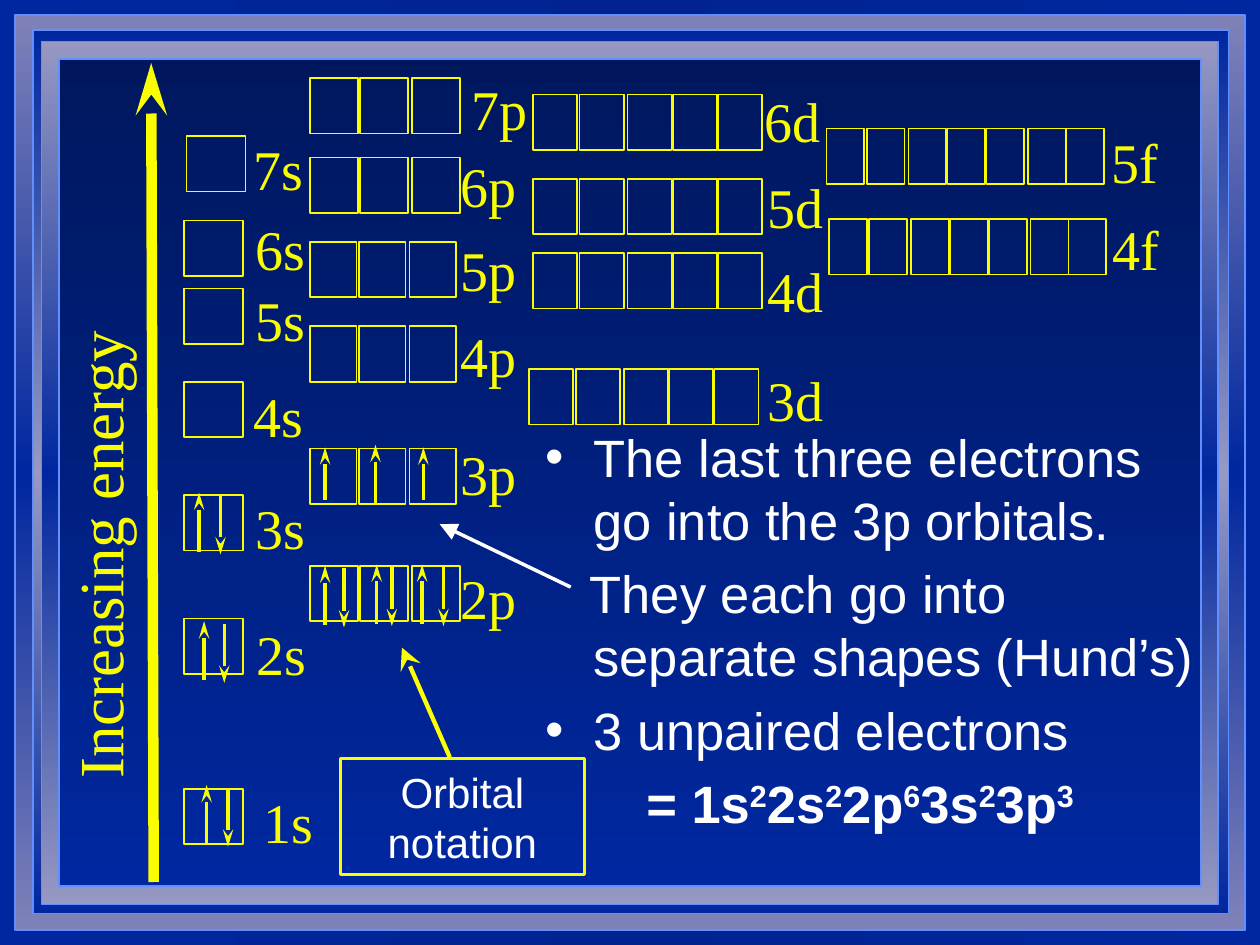
"""Build a slide of the orbital energy diagram for an atom with three unpaired 3p electrons."""
import pptx
import pptx.enum.dml
import pptx.enum.shapes
import pptx.enum.text
import pptx.oxml
import pptx.oxml.ns
import pptx.util
from pptx.util import Inches

COLORS = {"blue": "00279F", "mid": "002390", "night": "00175E", "haze": "7F82B8",
          "mist": "9799C2", "pale": "9799C2", "edge": "618FFD",
          "yellow": "FAFD00", "bright": "FFFF00", "white": "FFFFFF"}
SERIF, SANS = "Times New Roman", "Arial"

FRAMES = [
    ((0.12, 0.12, 9.76, 7.26), ("haze", "blue", "haze")),
    ((0.26, 0.24, 9.49, 7.01), ("blue", "mist", "blue")),
    ((0.33, 0.33, 9.34, 6.85), ("mist", "blue", "mist")),
    ((0.47, 0.47, 9.06, 6.56), ("night", "blue")),
]

CELLS = {
    "s": (0.47, (0,)),
    "p": (0.37, (0, 0.39, 0.79)),
    "wide p": (0.38, (0, 0.4, 0.81)),
    "d": (0.35, (0, 0.37, 0.75, 1.11, 1.47)),
    "f": (0.3, (0, 0.32, 0.65, 0.96, 1.27, 1.6, 1.9)),
}
CELL_HEIGHT = 0.44
ORBITALS = [
    ("1s", "s", (1.46, 6.26), (1.99, 6.2)),
    ("2s", "s", (1.46, 4.91), (1.94, 4.87)),
    ("3s", "s", (1.46, 3.93), (1.93, 3.87)),
    ("4s", "s", (1.46, 3.03), (1.91, 2.98)),
    ("5s", "s", (1.46, 2.29), (1.93, 2.22)),
    ("6s", "s", (1.46, 1.75), (1.93, 1.65)),
    ("7s", "s", (1.48, 1.08), (1.91, 1.02)),
    ("2p", "wide p", (2.46, 4.49), (3.56, 4.42)),
    ("3p", "p", (2.46, 3.56), (3.56, 3.44)),
    ("4p", "p", (2.46, 2.59), (3.56, 2.5)),
    ("5p", "p", (2.46, 1.92), (3.56, 1.82)),
    ("6p", "wide p", (2.46, 1.25), (3.56, 1.15)),
    ("7p", "wide p", (2.46, 0.62), (3.64, 0.54)),
    ("3d", "d", (4.2, 2.93), (5.99, 2.85)),
    ("4d", "d", (4.23, 2.01), (5.99, 1.99)),
    ("5d", "d", (4.23, 1.42), (5.99, 1.32)),
    ("6d", "d", (4.23, 0.75), (5.97, 0.64)),
    ("4f", "f", (6.58, 1.74), (8.73, 1.65)),
    ("5f", "f", (6.56, 1.02), (8.72, 0.96)),
]

PAIRS = [(1.64, 1.81, 6.23), (1.62, 1.78, 4.93), (1.58, 1.75, 3.91),
         (2.58, 2.73, 4.49), (2.99, 3.11, 4.48), (3.35, 3.52, 4.48)]
SINGLES = [(2.58, 3.55, 3.97), (2.98, 3.53, 3.99), (3.36, 3.55, 3.97)]
SPIN_LENGTH, SPIN_DROP = 0.47, 0.02

CONFIGURATION = [("1s", "2"), ("2s", "2"), ("2p", "6"), ("3s", "2"), ("3p", "3")]
POINTS = [
    ("The last three electrons go into the 3p orbitals.", True, 0.38, -0.38),
    ("They each go into separate shapes (Hund’s)", False, 0.38, -0.03),
    ("3 unpaired electrons", True, 0.38, -0.38),
    ("= ", False, 0.8, 0),
]


def rgb(name):
    return pptx.dml.color.RGBColor.from_string(COLORS[name])


def gradient(fill, element, names, angle):
    fill.gradient()
    fill.gradient_angle = angle
    stops = next(element.iter(pptx.oxml.ns.qn("a:gsLst")))
    for stop in list(stops):
        stops.remove(stop)
    for index, name in enumerate(names):
        place = 100000 * index // (len(names) - 1)
        stops.append(pptx.oxml.parse_xml(
            f'<a:gs {pptx.oxml.ns.nsdecls("a")} pos="{place}">'
            f'<a:srgbClr val="{COLORS[name]}"/></a:gs>'))


def outline(line, color, width):
    line.color.rgb = rgb(color)
    line.width = pptx.util.Pt(width)


def rectangle(page, place, color="yellow", width=1):
    box = page.shapes.add_shape(pptx.enum.shapes.MSO_SHAPE.RECTANGLE, *map(Inches, place))
    box.shadow.inherit = False
    box.fill.background()
    outline(box.line, color, width)
    return box


def write(para, text, size, font, color, **extra):
    span = para.add_run()
    span.text = text
    span.font.color.rgb = rgb(color)
    formats = {"size": pptx.util.Pt(size), "name": font, **extra}
    for key, value in formats.items():
        setattr(span.font, key, value)
    return span


def label(page, text, place, size):
    box = page.shapes.add_textbox(*map(Inches, place))
    box.text_frame.word_wrap = True
    write(box.text_frame.paragraphs[0], text, size, SERIF, "yellow")
    return box


def arrow(page, start, tip, color="yellow", width=2, kind="stealth", spread="med"):
    link = page.shapes.add_connector(
        pptx.enum.shapes.MSO_CONNECTOR.STRAIGHT, *map(Inches, start + tip))
    outline(link.line, color, width)
    names = pptx.oxml.ns.nsdecls("a")
    link.line._get_or_add_ln().append(pptx.oxml.parse_xml(
        f'<a:tailEnd {names} type="{kind}" w="{spread}" len="lg"/>'))
    link._element.spPr.append(pptx.oxml.parse_xml(f"<a:effectLst {names}/>"))


def draw_orbitals(page):
    for name, kind, (left, top), spot in ORBITALS:
        width, offsets = CELLS[kind]
        for offset in offsets:
            rectangle(page, (left + offset, top, width, CELL_HEIGHT))
        label(page, name, spot + (0.88 if kind == "s" else 0.69, 0.63), 32)


def draw_electrons(page):
    for x, top, bottom in SINGLES:
        arrow(page, (x, bottom), (x, top))
    for up, down, top in PAIRS:
        arrow(page, (up, top + SPIN_LENGTH), (up, top))
        top += SPIN_DROP
        arrow(page, (down, top), (down, top + SPIN_LENGTH))


def fill_points(body):
    for key, value in zip(("left", "top", "width", "height"), (4.23, 3.32, 5.41, 3.57)):
        setattr(body, key, Inches(value))
    frame = body.text_frame
    frame.auto_size = pptx.enum.text.MSO_AUTO_SIZE.NONE
    for index, (text, bullet, margin, indent) in enumerate(POINTS):
        para = frame.add_paragraph() if index else frame.paragraphs[0]
        para.space_before = pptx.util.Pt(6)
        properties = para._p.get_or_add_pPr()
        properties.set("marL", str(Inches(margin)))
        properties.set("indent", str(Inches(indent)))
        mark = 'buChar {} char="•"' if bullet else "buNone {}"
        properties.append(pptx.oxml.parse_xml(
            f'<a:{mark.format(pptx.oxml.ns.nsdecls("a"))}/>'))
        write(para, text, 30, SANS, "white", bold=index == len(POINTS) - 1)
    for shell, count in CONFIGURATION:
        write(para, shell, 30, SANS, "white", bold=True)
        power = write(para, count, 30, SANS, "white", bold=True)
        power.font._element.set("baseline", "30000")


def main():
    deck = pptx.Presentation()
    deck.slide_width, deck.slide_height = Inches(10), Inches(7.5)
    page = deck.slides.add_slide(deck.slide_layouts[1])
    gradient(page.background.fill, page._element, ("blue", "mid", "blue"), 0)
    title, body = page.placeholders
    title._element.getparent().remove(title._element)

    for place, names in FRAMES:
        panel = rectangle(page, place, "edge")
        gradient(panel.fill, panel._element, names, 270)

    arrow(page, (1.22, 7), (1.2, 0.5), width=6)
    label(page, "Increasing energy", (-1.54, 3.61, 4.64, 0.7), 36).rotation = 270
    draw_orbitals(page)
    fill_points(body)
    page.shapes._spTree.append(body._element)
    draw_electrons(page)

    arrow(page, (4.53, 4.66), (3.49, 4.16), "white", 2, "triangle", "lg")
    note = rectangle(page, (2.7, 6.02, 1.94, 0.92), width=1.75)
    note.text_frame.word_wrap = True
    para = note.text_frame.paragraphs[0]
    para.alignment = pptx.enum.text.PP_ALIGN.CENTER
    write(para, "Orbital notation", 24, SANS, "white")
    arrow(page, (3.57, 6.01), (3.19, 5.14), "bright", 2.5, "stealth", "lg")
    deck.save("out.pptx")


if __name__ == "__main__":
    main()
